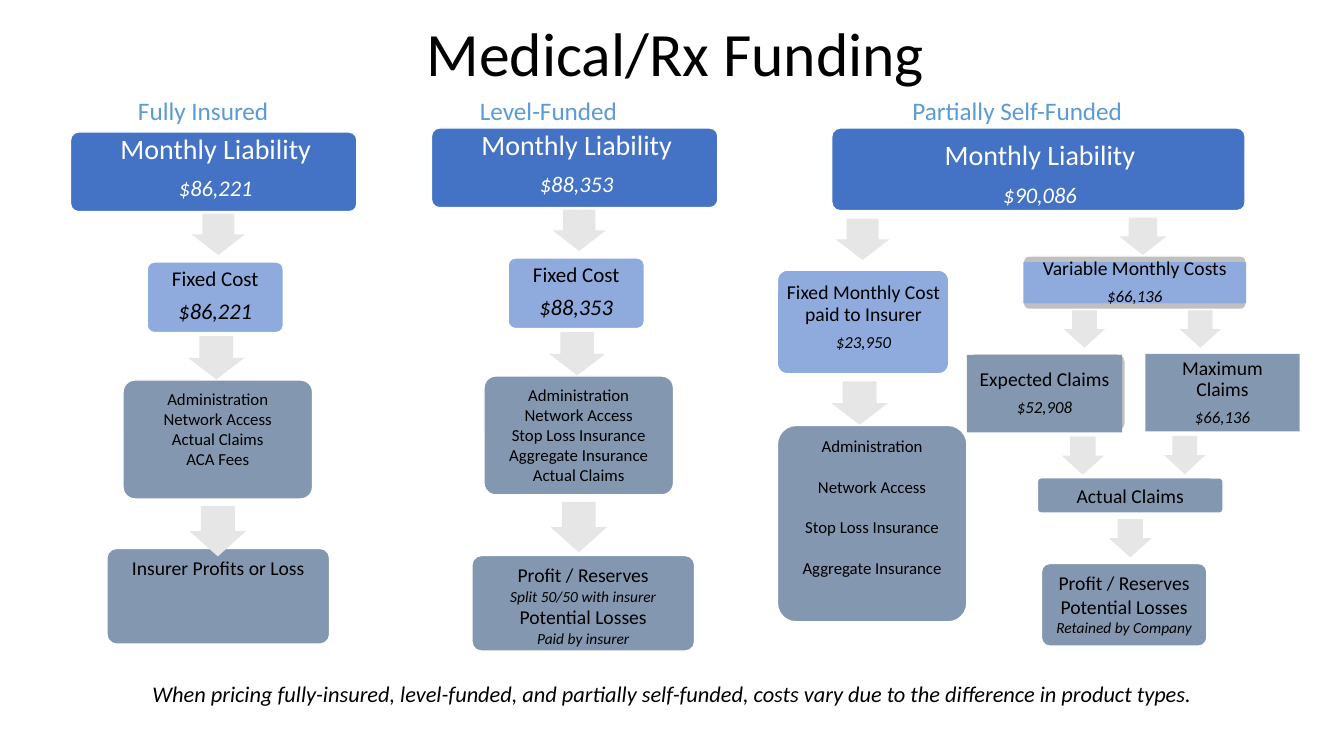
from lxml import etree
from pptx import Presentation
from pptx import util as u
from pptx.dml.color import RGBColor
from pptx.enum import shapes, text
from pptx.oxml import ns

COLORS = {"black": "000000", "white": "FFFFFF", "heading": "5B9BD5", "total": "4472C4",
          "cost": "8FAADC", "detail": "8497B0", "arrow": "E7E6E6", "backing": "C0C0C0"}
ROUND = shapes.MSO_SHAPE.ROUNDED_RECTANGLE
RECT = shapes.MSO_SHAPE.RECTANGLE

deck = Presentation()
deck.slide_width, deck.slide_height = u.Inches(13.33), u.Inches(7.5)
page = deck.slides.add_slide(deck.slide_layouts[5])


def add_shape(kind, at, fill, outlined=False):
    shape = page.shapes.add_shape(kind, *[u.Inches(v) for v in at])
    shape.shadow.inherit = False
    shape.fill.solid()
    shape.fill.fore_color.rgb = RGBColor.from_string(COLORS[fill])
    if outlined:
        shape.line.color.rgb = RGBColor.from_string(COLORS["white"])
        shape.line.width = u.Pt(1)
    else:
        shape.line.fill.background()
    if kind == ROUND:
        shape.adjustments[0] = 0.1
    return shape


def write(box, lines, color="black", label=False, gap=0, align=text.PP_ALIGN.CENTER):
    """Fill a box with (text, size, italic) lines; a label is centred vertically and set tight."""
    frame = box.text_frame
    frame.word_wrap = True
    frame.vertical_anchor = text.MSO_ANCHOR.MIDDLE if label else text.MSO_ANCHOR.TOP
    if label:
        frame.margin_top = frame.margin_bottom = u.Inches(0.1)
    for i, (words, size, italic) in enumerate(lines):
        para = frame.add_paragraph() if i else frame.paragraphs[0]
        para.alignment = align
        para.space_after = u.Pt(gap)
        if label:
            para.line_spacing = 0.9
            para.space_after = u.Pt(round(size * 0.43, 1))
        span = para.add_run()
        span.text = words
        span.font.name = "Calibri"
        span.font.size = u.Pt(size)
        span.font.italic = italic
        span.font.color.rgb = RGBColor.from_string(COLORS[color])


# Title, column headings and footnote
title = page.shapes.title
title.left, title.top, title.width, title.height = [u.Inches(v) for v in (2.24, 0.14, 8.92, 0.75)]
write(title, [("Medical/Rx Funding", 44, False)])
title.text_frame.vertical_anchor = text.MSO_ANCHOR.MIDDLE

headings = page.shapes.add_textbox(*[u.Inches(v) for v in (1.27, 0.9, 11.09, 0.4)])
write(headings, [("Fully Insured\tLevel-Funded\tPartially Self-Funded", 18, False)],
      "heading", align=text.PP_ALIGN.LEFT)
tabs = etree.SubElement(headings.text_frame.paragraphs[0]._p.get_or_add_pPr(), ns.qn("a:tabLst"))
for stop in (3.39, 7.68):
    etree.SubElement(tabs, ns.qn("a:tab"), pos=str(u.Inches(stop)), algn="l")

footnote = page.shapes.add_textbox(*[u.Inches(v) for v in (0, 6.7, 13.33, 0.37)])
write(footnote, [("When pricing fully-insured, level-funded, and partially self-funded, "
                  "costs vary due to the difference in product types.", 16, True)])

# Boxes as (kind, place, fill, outlined)
panels = []
# Labels as (place, colour, lines)
labels = []
# Top-aligned text boxes as (place, lines, gap)
details = []
# Arrows as (left, top, width, height) before the quarter turn
arrows = []

# Fully insured and level-funded share one layout
single_columns = [
    (0, 0, "$86,221", ["Administration", "Network Access", "Actual Claims", "ACA Fees"],
     (1.06, 5.44), [("Insurer Profits or Loss", 14, False)]),
    (3.58, -0.04, "$88,353", ["Administration", "Network Access", "Stop Loss Insurance",
                              "Aggregate Insurance", "Actual Claims"],
     (4.68, 5.51), [("Profit / Reserves", 14, False), ("Split 50/50 with insurer", 11, True),
                    ("Potential Losses", 14, False), ("Paid by insurer", 11, True)]),
]
for dx, dy, amount, items, (result_x, result_y), result in single_columns:
    panels += [(ROUND, (0.7 + dx, 1.31 + dy, 2.84, 0.79), "total", True),
               (ROUND, (1.46 + dx, 2.6 + dy, 1.35, 0.7), "cost", True)]
    labels += [((0.74 + dx, 1.37 + dy, 2.8, 0.6), "white",
                [("Monthly Liability", 20, False), (amount, 16, True)]),
               ((1.22 + dx, 2.59 + dy, 1.83, 0.7), "black",
                [("Fixed Cost", 15, False), (amount, 16, True)])]
    details += [((1.22 + dx, 3.77 + dy, 1.88, 1.18), [(item, 12, False) for item in items], 0),
                ((result_x, result_y, 2.21, 0.95), result, 0)]
    arrows += [(1.96 + dx, 2.06 + dy, 0.41, 0.53), (1.93 + dx, 3.27 + dy, 0.43, 0.56),
               (1.91 + dx, 4.99 + dy, 0.5, 0.56)]

# Partially self-funded splits into fixed and variable costs
panels += [(ROUND, (8.25, 1.27, 4.1, 0.82), "total", True),
           (ROUND, (7.71, 2.68, 1.7, 1.03), "cost", True),
           (ROUND, (10.15, 2.54, 2.21, 0.53), "backing", True),
           (RECT, (10.15, 2.6, 2.21, 0.41), "cost", False),
           (ROUND, (9.59, 3.51, 1.57, 0.77), "backing", True),
           (RECT, (9.59, 3.52, 1.54, 0.77), "detail", False),
           (RECT, (11.36, 3.51, 1.53, 0.77), "detail", False)]
labels += [((8.28, 1.37, 4.07, 0.73), "white",
            [("Monthly Liability", 20, False), ("$90,086", 16, True)])]
for place, name, amount in [
    ((7.65, 2.8, 1.83, 0.7), "Fixed Monthly Cost paid to Insurer", "$23,950"),
    ((10.15, 2.6, 2.21, 0.41), "Variable Monthly Costs", "$66,136"),
    ((9.59, 3.52, 1.54, 0.77), "Expected Claims", "$52,908"),
    ((11.36, 3.51, 1.53, 0.77), "Maximum Claims", "$66,136"),
]:
    labels.append((place, "black", [(name, 14, False), (amount, 12, True)]))
details += [
    ((7.71, 4.22, 1.88, 1.95), [(item, 12, False) for item in (
        "Administration", "Network Access", "Stop Loss Insurance", "Aggregate Insurance")], 14.6),
    ((10.29, 4.74, 1.84, 0.35), [("Actual Claims", 14, False)], 0),
    ((10.33, 5.59, 1.64, 0.82), [("Profit / Reserves Potential Losses", 14, False),
                                 ("Retained by Company", 11, True)], 0),
]
arrows += [(8.35, 2.11, 0.41, 0.53), (8.31, 3.72, 0.43, 0.56), (11.15, 2.11, 0.37, 0.47),
           (10.57, 3.06, 0.37, 0.41), (11.72, 3.06, 0.37, 0.41), (10.55, 4.31, 0.38, 0.42),
           (11.56, 4.31, 0.38, 0.41), (11.02, 5.13, 0.38, 0.42)]

# Draw from back to front; a label goes into the plain rectangle at its place if there is one
rectangles = {}
for kind, place, fill, outlined in panels:
    panel = add_shape(kind, place, fill, outlined)
    if kind == RECT:
        rectangles[place] = panel
for place, color, lines in labels:
    box = rectangles.get(place) or page.shapes.add_textbox(*[u.Inches(v) for v in place])
    write(box, lines, color, label=True)
for place, lines, gap in details:
    write(add_shape(ROUND, place, "detail", True), lines, gap=gap)
for place in arrows:
    arrow = add_shape(shapes.MSO_SHAPE.RIGHT_ARROW, place, "arrow")
    arrow.adjustments[0], arrow.adjustments[1] = 0.6, 0.5
    arrow.rotation = 90

deck.save("out.pptx")
